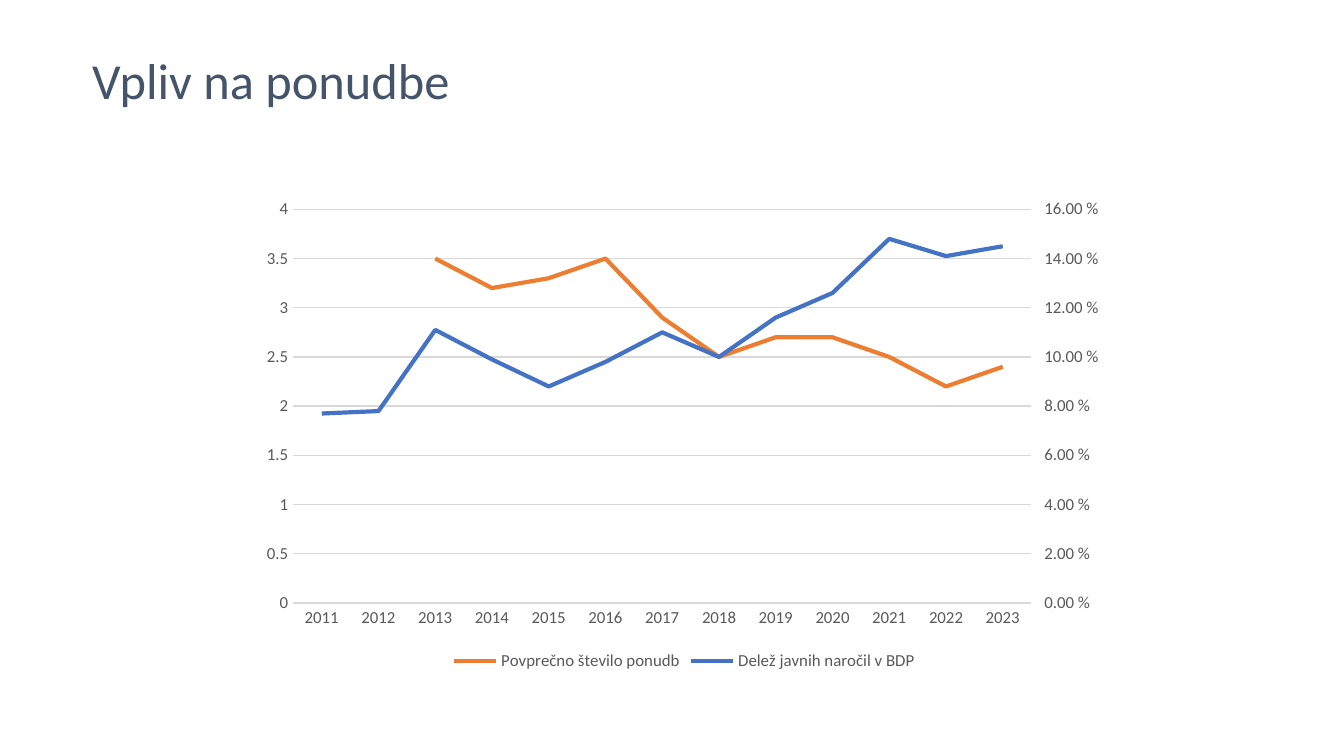
from copy import deepcopy

from pptx import Presentation
from pptx.chart.axis import CategoryAxis, ValueAxis
from pptx.chart.data import CategoryChartData
from pptx.dml.color import RGBColor
from pptx.enum.chart import XL_CHART_TYPE as Kind
from pptx.enum.chart import XL_LEGEND_POSITION as Spot
from pptx.enum.chart import XL_TICK_MARK as Tick
from pptx.enum.text import MSO_ANCHOR as Anchor
from pptx.oxml import parse_xml
from pptx.oxml.ns import nsdecls
from pptx.util import Pt

SCALE = 914400 / 134.4
COLORS = {"title": "44546A", "label": "595959", "grid": "D9D9D9",
          "bids": "ED7D31", "share": "4472C4"}
YEARS = [str(year) for year in range(2011, 2024)]
BIDS = [None, None, 3.5, 3.2, 3.3, 3.5, 2.9, 2.5, 2.7, 2.7, 2.5, 2.2, 2.4]
SHARE = [0.077, 0.078, 0.111, 0.099, 0.088, 0.098, 0.11,
         0.1, 0.116, 0.126, 0.148, 0.141, 0.145]
PLOT = {"x": 0.05, "y": 0.04, "w": 0.85, "h": 0.81}


def px(*sizes):
    return [round(size * SCALE) for size in sizes]


def rgb(name):
    return RGBColor.from_string(COLORS[name])


class Deck:
    def __init__(self, wide, high, face):
        self.face = face
        self.prs = Presentation()
        self.prs.slide_width, self.prs.slide_height = px(wide, high)
        self.slide = self.prs.slides.add_slide(self.prs.slide_layouts[6])

    def style(self, font, size, color):
        font.name = self.face
        font.size = Pt(size)
        font.color.rgb = rgb(color)

    def text(self, words, box, size=18, color="label", anchor=Anchor.MIDDLE):
        frame = self.slide.shapes.add_textbox(*px(*box)).text_frame
        frame.word_wrap = True
        frame.vertical_anchor = anchor
        run = frame.paragraphs[0].add_run()
        run.text = words
        self.style(run.font, size, color)

    def chart(self, box, cats, lines):
        data = CategoryChartData()
        data.categories = cats
        for name, vals, _, form in lines:
            data.add_series(name, vals, number_format=form)
        chart = self.slide.shapes.add_chart(Kind.LINE, *px(*box), data).chart
        self.style(chart.font, 9, "label")
        chart.has_title = False
        chart.has_legend = True
        chart.legend.position = Spot.BOTTOM
        chart.legend.include_in_layout = False
        self.style(chart.legend.font, 9, "label")
        for series, (_, _, color, _) in zip(chart.plots[0].series, lines):
            series.smooth = False
            series.format.line.width = Pt(2.25)
            series.format.line.color.rgb = rgb(color)
        self.axes(chart)
        return chart

    def axes(self, chart):
        base, left = chart.category_axis, chart.value_axis
        for axis in base, left:
            axis.major_tick_mark = axis.minor_tick_mark = Tick.NONE
            self.style(axis.tick_labels.font, 9, "label")
        left.format.line.fill.background()
        left.has_major_gridlines = True
        for line in base.format.line, left.major_gridlines.format.line:
            line.width = Pt(0.75)
            line.color.rgb = rgb("grid")
        self.span(left, 4, 0.5, "General")

    def span(self, axis, top, step, form):
        axis.minimum_scale, axis.maximum_scale = 0, top
        axis.major_unit = step
        axis.tick_labels.number_format = form
        axis.tick_labels.number_format_is_linked = False

    def right(self, chart, top, step, form):
        area = chart.element.chart.plotArea
        plot, base, left = (area.xpath(f"c:{tag}")[0]
                            for tag in ("lineChart", "catAx", "valAx"))
        twin, cat, val = map(deepcopy, (plot, base, left))
        plot.remove(plot.xpath("c:ser")[1])
        twin.remove(twin.xpath("c:ser")[0])
        plot.addnext(twin)
        left.addnext(val)
        val.addnext(cat)
        for node, ids in (twin, (101, 102)), (cat, (101, 102)), (val, (102, 101)):
            for ref, num in zip(node.xpath("c:axId|c:crossAx"), ids):
                ref.set("val", str(num))
        for tag, mode in ("axPos", "r"), ("crosses", "max"):
            val.xpath(f"c:{tag}")[0].set("val", mode)
        CategoryAxis(cat).visible = False
        axis = ValueAxis(val)
        axis.has_major_gridlines = False
        axis.major_tick_mark = Tick.OUTSIDE
        self.span(axis, top, step, form)

    def layout(self, chart, parts):
        area = chart.element.chart.plotArea
        for old in area.xpath("c:layout"):
            area.remove(old)
        modes = "".join(f'<c:{key}Mode val="edge"/>' for key in "xy")
        sizes = "".join(f'<c:{key} val="{val}"/>' for key, val in parts.items())
        area.insert(0, parse_xml(
            f'<c:layout {nsdecls("c")}><c:manualLayout>'
            f'<c:layoutTarget val="inner"/>{modes}{sizes}'
            '</c:manualLayout></c:layout>'))


def main():
    deck = Deck(1344, 756, "Calibri")
    deck.text("Vpliv na ponudbe", (79, 52, 896, 54), size=27, color="title")
    chart = deck.chart((250, 190, 868, 486), YEARS, [
        ("Povprečno število ponudb", BIDS, "bids", "General"),
        ("Delež javnih naročil v BDP", SHARE, "share", "0.00 %")])
    deck.right(chart, 0.16, 0.02, "0.00 %")
    deck.layout(chart, PLOT)
    deck.prs.save("out.pptx")


if __name__ == "__main__":
    main()
